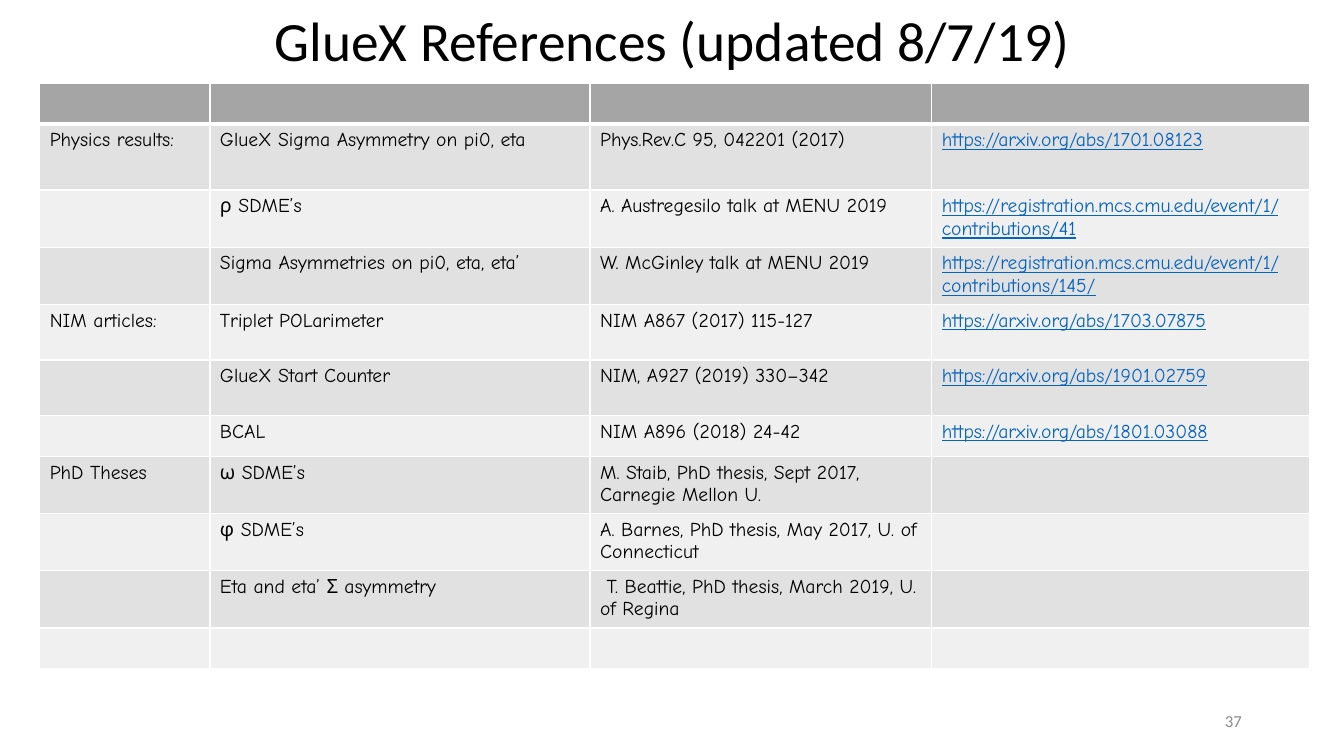
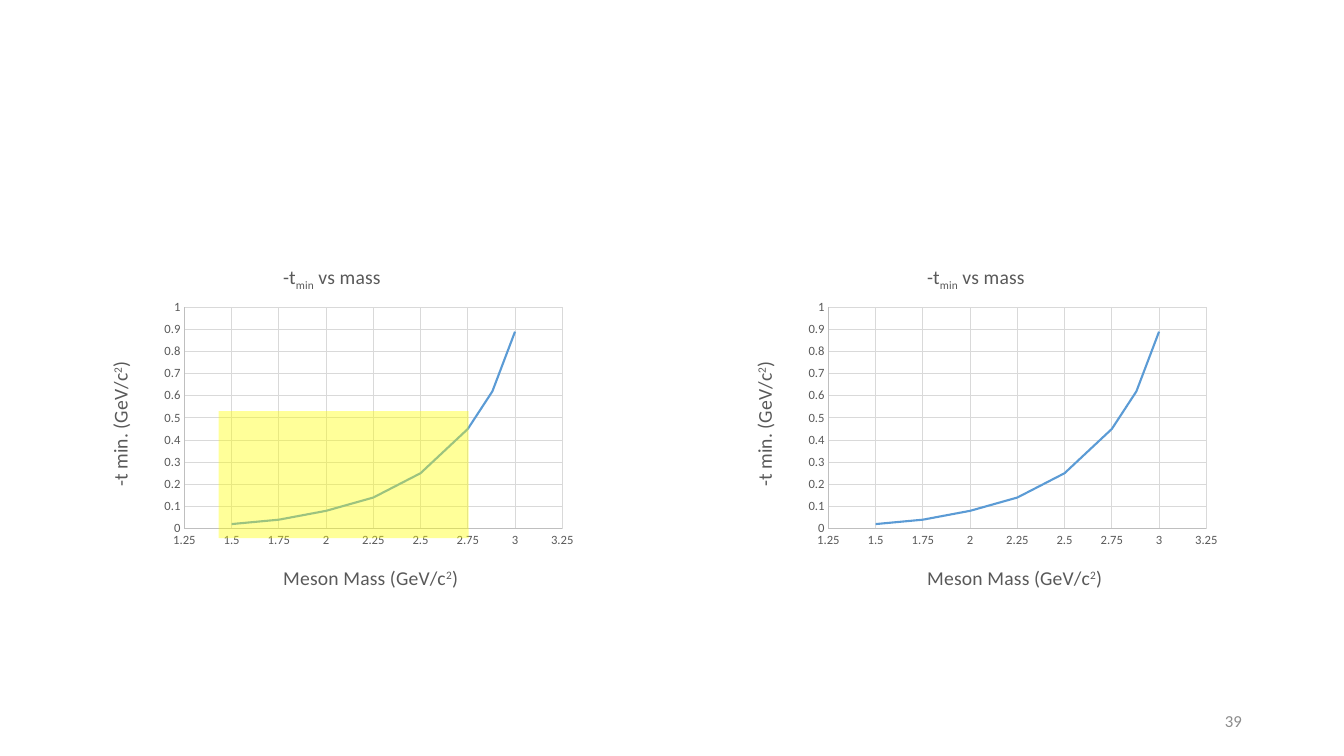
from lxml import etree
from pptx import Presentation
from pptx.chart.data import XyChartData
from pptx.dml.color import RGBColor
from pptx.enum.chart import XL_CHART_TYPE, XL_TICK_MARK
from pptx.enum.shapes import MSO_SHAPE
from pptx.enum.text import MSO_ANCHOR, PP_ALIGN
from pptx.oxml.ns import qn
from pptx.util import Cm, Pt

SCATTER = XL_CHART_TYPE.XY_SCATTER_SMOOTH_NO_MARKERS
NO_TICK = XL_TICK_MARK.NONE
RECT = MSO_SHAPE.RECTANGLE
MIDDLE = MSO_ANCHOR.MIDDLE
LEFT, CENTER, RIGHT = PP_ALIGN.LEFT, PP_ALIGN.CENTER, PP_ALIGN.RIGHT

BLACK, WHITE, BLUE, YELLOW = "000000", "FFFFFF", "5B9BD5", "FFFF00"
HEAD, DARK, PALE, LINK = "A5A5A5", "E1E1E1", "F0F0F0", "0563C1"
GRAY, AXIS, GRID, FOOT = "595959", "BFBFBF", "D9D9D9", "8C8C8C"
SANS, COMIC = "Calibri", "Comic Neue"
hue = RGBColor.from_string


def write(frame, text, size=14, color=BLACK, font=SANS, align=LEFT,
          under=False, shift=0, space=None):
    """Fill a text frame; parts between bars are shifted off the baseline."""
    para = frame.paragraphs[0]
    para.alignment = align
    if space:
        para.line_spacing = space
    for i, part in enumerate(text.split("|")):
        run = para.add_run()
        run.text = part
        run.font.size = Pt(size)
        run.font.name = font
        run.font.bold = False
        run.font.color.rgb = hue(color)
        if under:
            run.font.underline = True
        if i % 2:
            run.font._element.set("baseline", str(shift))


def place(node, index, **spots):
    """Give a chart part a manual layout in fractions of the chart."""
    old = node.find(qn("c:layout"))
    if old is not None:
        node.remove(old)
    layout = etree.Element(qn("c:layout"))
    manual = etree.SubElement(layout, qn("c:manualLayout"))
    if "w" in spots:
        etree.SubElement(manual, qn("c:layoutTarget"), val="inner")
    for key in "xy":
        etree.SubElement(manual, qn(f"c:{key}Mode"), val="edge")
    for key, val in spots.items():
        etree.SubElement(manual, qn(f"c:{key}"), val=str(val))
    node.insert(index, layout)


deck = Presentation()
deck.slide_width, deck.slide_height = Cm(33.87), Cm(19.05)
blank = deck.slide_layouts[6]
refs, plots = [deck.slides.add_slide(blank) for _ in range(2)]

# References
box = refs.shapes.add_textbox(Cm(5.51), Cm(0.2), Cm(22.86), Cm(1.78))
box.text_frame.word_wrap = True
box.text_frame.vertical_anchor = MIDDLE
write(box.text_frame, "GlueX References (updated 8/7/19)", size=39.6,
      align=CENTER, space=0.9)

ARXIV = "https://arxiv.org/abs/"
EVENT = "https://registration.mcs.cmu.edu/event/1/contributions/"
rows = [
    (1.04, "", "", "", ""),
    (1.66, "Physics results:", "GlueX Sigma Asymmetry on pi0, eta",
     "Phys.Rev.C 95, 042201 (2017)", ARXIV + "1701.08123"),
    (1.4, "", "ρ SDME’s", "A. Austregesilo talk at MENU 2019", EVENT + "41"),
    (1.4, "", "Sigma Asymmetries on pi0, eta, eta’",
     "W. McGinley talk at MENU 2019", EVENT + "145/"),
    (1.4, "NIM articles:", "Triplet POLarimeter", "NIM A867 (2017) 115-127",
     ARXIV + "1703.07875"),
    (1.4, "", "GlueX Start Counter", "NIM, A927 (2019) 330–342",
     ARXIV + "1901.02759"),
    (1.03, "", "BCAL", "NIM A896 (2018) 24-42", ARXIV + "1801.03088"),
    (1.4, "PhD Theses", "ω SDME’s",
     "M. Staib, PhD thesis, Sept 2017, Carnegie Mellon U.", ""),
    (1.4, "", "φ SDME’s",
     "A. Barnes, PhD thesis, May 2017, U. of Connecticut", ""),
    (1.4, "", "Eta and eta’ Σ asymmetry",
     " T. Beattie, PhD thesis, March 2019, U. of Regina", ""),
    (1.03, "", "", "", ""),
]
widths = [4.29, 9.58, 8.61, 9.52]
table = refs.shapes.add_table(len(rows), len(widths), Cm(1), Cm(2.09),
                              Cm(sum(widths)), Cm(14.56)).table
for col, width in zip(table.columns, widths):
    col.width = Cm(width)
for r, (height, *texts) in enumerate(rows):
    table.rows[r].height = Cm(height)
    for c, text in enumerate(texts):
        cell = table.cell(r, c)
        cell.fill.solid()
        cell.fill.fore_color.rgb = hue((DARK if r % 2 else PALE) if r else HEAD)
        if text:
            link = c == 3
            write(cell.text_frame, text, font=COMIC, under=link,
                  color=LINK if link else BLACK)
        props = cell._tc.get_or_add_tcPr()
        for i, side in enumerate("LRTB"):
            thick = (r, side) in ((0, "B"), (1, "T"))
            edge = etree.Element(qn(f"a:ln{side}"), w=str(Pt(3 if thick else 1)))
            fill = etree.SubElement(edge, qn("a:solidFill"))
            etree.SubElement(fill, qn("a:srgbClr"), val=WHITE)
            props.insert(i, edge)

# Mass plots
points = [(1.5, 0.02), (1.75, 0.04), (2, 0.08), (2.25, 0.14),
          (2.5, 0.25), (2.75, 0.45), (2.88, 0.62), (3, 0.89)]
data = XyChartData()
series = data.add_series("Series 1")
for x, y in points:
    series.add_data_point(x, y)

for left in (1.98, 18.21):
    chart = plots.shapes.add_chart(SCATTER, Cm(left), Cm(6.1), Cm(12.7),
                                   Cm(9.14), data).chart
    chart.has_legend = False
    chart.font.size = Pt(10)
    chart.font.name = SANS
    curve = chart.plots[0].series[0]
    curve.smooth = True
    curve.format.line.color.rgb = hue(BLUE)
    curve.format.line.width = Pt(1.5)
    chart.plots[0].vary_by_categories = False
    place(chart._chartSpace.chart.plotArea, 0, x=0.21, y=0.18, w=0.75, h=0.61)

    across, up = chart.category_axis, chart.value_axis
    for axis, low, high, step in ((across, 1.25, 3.25, 0.25), (up, 0, 1, 0.1)):
        axis.minimum_scale, axis.maximum_scale = low, high
        axis.major_unit = step
        axis.major_tick_mark = axis.minor_tick_mark = NO_TICK
        axis.has_major_gridlines = True
        for line, color in ((axis.format.line, AXIS),
                            (axis.major_gridlines.format.line, GRID)):
            line.color.rgb = hue(color)
            line.width = Pt(0.75)
        labels = axis.tick_labels
        labels.number_format = "General"
        labels.number_format_is_linked = False
        labels.font.size = Pt(9)
        labels.font.name = SANS
        labels.font.color.rgb = hue(GRAY)

    for title, text, shift, turn, x, y in (
            (chart.chart_title, "-t|min| vs mass", -25000, 0, 0.4, 0.05),
            (across.axis_title, "Meson Mass (GeV/c|2|)", 30000, 0, 0.4, 0.88),
            (up.axis_title, "-t min. (GeV/c|2|)", 30000, -90, 0.05, 0.32)):
        write(title.text_frame, text, color=GRAY, align=CENTER, shift=shift)
        body = title.text_frame._txBody.find(qn("a:bodyPr"))
        body.set("rot", str(turn * 60000))
        body.set("vert", "horz")
        place(title._element, 1, x=x, y=y)

    if left < 10:
        zone = plots.shapes.add_shape(RECT, Cm(5.51), Cm(10.36), Cm(6.3), Cm(3.2))
        zone.shadow.inherit = False
        zone.line.fill.background()
        zone.fill.solid()
        zone.fill.fore_color.rgb = hue(YELLOW)
        tone = zone._element.spPr.find(qn("a:solidFill"))[0]
        etree.SubElement(tone, qn("a:alpha"), val="40000")

# Page numbers
for slide, number in ((refs, "37"), (plots, "39")):
    box = slide.shapes.add_textbox(Cm(23.93), Cm(17.65), Cm(7.62), Cm(1.02))
    box.text_frame.word_wrap = True
    box.text_frame.vertical_anchor = MIDDLE
    write(box.text_frame, number, size=12, color=FOOT, align=RIGHT)

deck.save("out.pptx")
